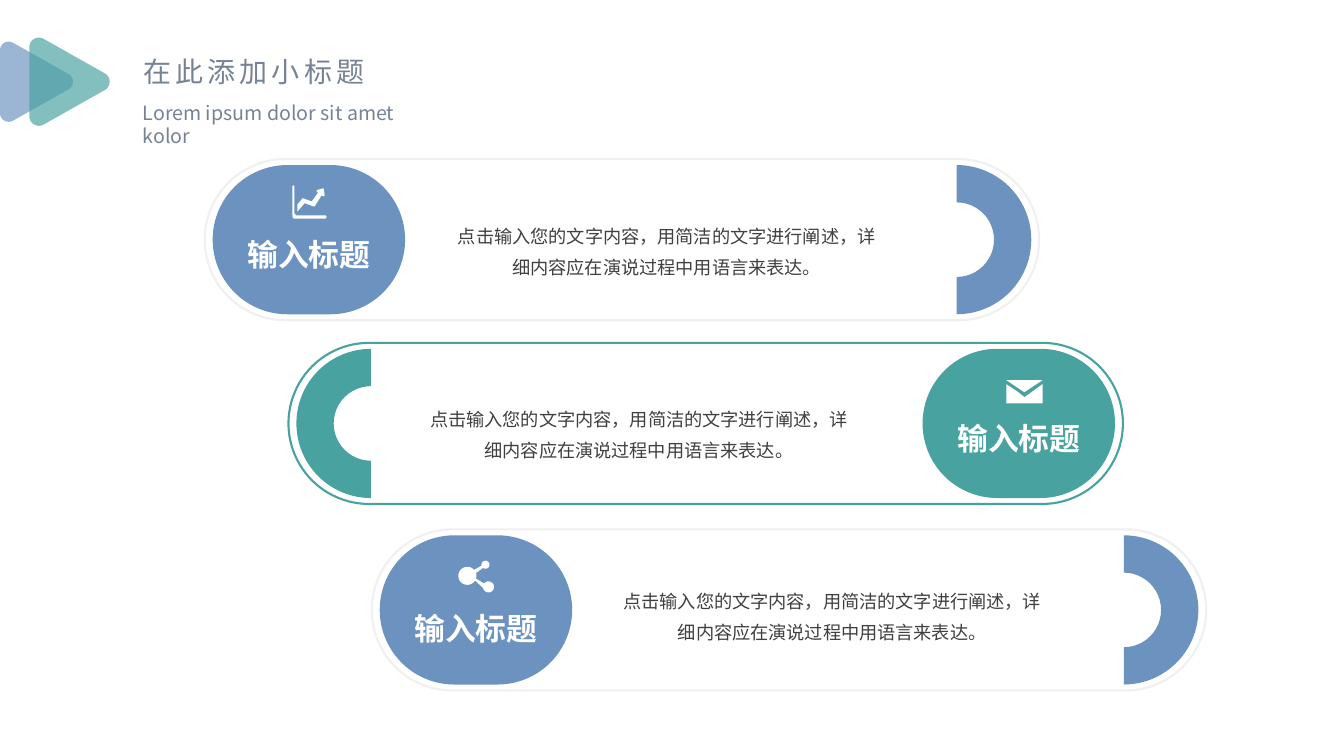
from dataclasses import dataclass
from math import cos, radians, sin

from lxml import etree
from pptx import Presentation
from pptx.dml.color import RGBColor
from pptx.enum.shapes import MSO_SHAPE
from pptx.enum.text import MSO_ANCHOR, MSO_AUTO_SIZE, PP_ALIGN
from pptx.oxml.ns import qn
from pptx.util import Cm, Pt

PILL, ARC = MSO_SHAPE.ROUNDED_RECTANGLE, MSO_SHAPE.BLOCK_ARC
LEFT, CENTER = PP_ALIGN.LEFT, PP_ALIGN.CENTER
TOP, GROW = MSO_ANCHOR.TOP, MSO_AUTO_SIZE.SHAPE_TO_FIT_TEXT


@dataclass(frozen=True)
class Theme:
    font: str = "Noto Sans CJK SC"
    blue: str = "6C92C0"
    teal: str = "48A2A0"
    pale: str = "F0F0F0"
    heading: str = "768394"
    body: str = "404040"
    white: str = "FFFFFF"
    title_size: int = 20
    subtitle_size: int = 14
    label_size: int = 22
    body_size: int = 13
    body_leading: int = 22
    frame_line: float = 1.5
    marker_opacity: int = 68


T = Theme()


def arc(cx, cy, r, start, end, steps=16):
    """Points along a circle, angles in degrees, clockwise on the slide."""
    angles = [radians(start + (end - start) * i / steps) for i in range(steps + 1)]
    return [(cx + r * cos(a), cy + r * sin(a)) for a in angles]


# Content
TITLE = "在此添加小标题"
SUBTITLE = "Lorem ipsum dolor sit amet kolor"
LABEL = "输入标题"
BODY = "点击输入您的文字内容，用简洁的文字进行阐述，详细内容应在演说过程中用语言来表达。"

# Icon outlines, in hundredths of an inch
CHART_ICON = [
    [(30, 3), (31, 3), (32, 10), (31, 11), (29, 10), (22, 21), (21, 21),
     (13, 18), (12, 18), (5, 26), (5, 19), (10, 13), (11, 13), (19, 16),
     (20, 15), (25, 8), (25, 7), (24, 6), (24, 5)],
    [(0, 1), (1, 0), (2, 1), (2, 28), (4, 30), (33, 30), (34, 31),
     (33, 33), (1, 33), (0, 31)],
]
MAIL_ICON = [
    [(0, 4), (12, 12), (18, 17), (36, 4), (36, 23), (0, 23)],
    [(0, 0), (36, 0), (18, 12)],
]
SHARE_ICON = [
    arc(9, 15, 9, 32, 319) + arc(27, 4, 4, 166, 487)
    + arc(9, 15, 9, -18, 18) + arc(30, 26, 5.5, 217, 530),
]
ICON_UNIT = 0.0254

# Offsets (cm): icon from capsule left and frame top, others from the frame
ROWS = [
    dict(left=5.16, top=4.01, color=T.blue, line=T.pale, capsule_right=False,
         icon=CHART_ICON, icon_at=(2.01, 0.66), label_dy=1.93, body_at=(6.24, 1.45)),
    dict(left=7.27, top=8.64, color=T.teal, line=T.teal, capsule_right=True,
         icon=MAIL_ICON, icon_at=(2.11, 0.94), label_dy=1.93, body_at=(3.43, 1.42)),
    dict(left=9.37, top=13.34, color=T.blue, line=T.pale, capsule_right=False,
         icon=SHARE_ICON, icon_at=(1.98, 0.79), label_dy=2.03, body_at=(6.2, 1.32)),
]
FRAME_W, FRAME_H = 21.03, 4.06
CAPSULE_W, CAPSULE_H = 4.85, 3.76
SIDE_GAP = 0.2
LABEL_W, LABEL_H = 3.4, 0.94
BODY_W, BODY_H = 10.8, 1.47

# Rounded triangles: left edge, scale, colour
MARKERS = [(0, 1, T.blue), (0.74, 1.1, T.teal)]
MARKER_Y = 2.06
TRIANGLE = (arc(0.22, -0.79, 0.22, 180, 300) + arc(1.62, 0, 0.22, -60, 60)
            + arc(0.22, 0.79, 0.22, 60, 180))


def paint(s, fill=None, line=None):
    s.shadow.inherit = False
    if fill:
        s.fill.solid()
        s.fill.fore_color.rgb = RGBColor.from_string(fill)
    else:
        s.fill.background()
    if line:
        s.line.color.rgb = RGBColor.from_string(line)
        s.line.width = Pt(T.frame_line)
    else:
        s.line.fill.background()


def add_preset(slide, kind, box, **colors):
    s = slide.shapes.add_shape(kind, *map(Cm, box))
    if kind == PILL:
        s.adjustments[0] = 0.5
    paint(s, **colors)
    return s


def add_outline(slide, contours, unit, left, top, color):
    """Fill closed contours whose points are in units of `unit` cm."""
    scaled = [[(Cm(x * unit), Cm(y * unit)) for x, y in c] for c in contours]
    builder = slide.shapes.build_freeform(*scaled[0][0], scale=1.0)
    for i, points in enumerate(scaled):
        if i:
            builder.move_to(*points[0])
        builder.add_line_segments(points[1:], close=True)
    s = builder.convert_to_shape(Cm(left), Cm(top))
    paint(s, fill=color)
    return s


def set_opacity(s, percent):
    color = s.fill._xPr.find(".//" + qn("a:srgbClr"))
    etree.SubElement(color, qn("a:alpha")).set("val", str(percent * 1000))


def write(s, text, size, color, align=LEFT, bold=False, wrap=True,
          inset=None, leading=None, tracking=None):
    tf = s.text_frame
    frame = dict(word_wrap=wrap, auto_size=GROW, vertical_anchor=TOP)
    if inset is not None:
        for side in ("left", "top", "right", "bottom"):
            frame["margin_" + side] = Cm(inset)
    for name, value in frame.items():
        setattr(tf, name, value)
    p = tf.paragraphs[0]
    p.alignment = align
    if leading:
        p.line_spacing = Pt(leading)
    r = p.add_run()
    r.text = text
    for name, value in dict(name=T.font, size=Pt(size), bold=bold).items():
        setattr(r.font, name, value)
    r.font.color.rgb = RGBColor.from_string(color)
    props = r._r.get_or_add_rPr()
    etree.SubElement(props, qn("a:ea")).set("typeface", T.font)
    if tracking:
        props.set("spc", str(tracking * 100))


def add_text(slide, box, *args, **fmt):
    write(slide.shapes.add_textbox(*map(Cm, box)), *args, **fmt)


def add_header(slide):
    title = slide.shapes.title
    for name, value in dict(left=3.35, top=1.24, width=6.25, height=1.12).items():
        setattr(title, name, Cm(value))
    write(title, TITLE, T.title_size, T.heading, wrap=False, tracking=3)
    add_text(slide, (3.35, 2.41, 8.1, 0.86), SUBTITLE, T.subtitle_size, T.heading)
    for left, scale, color in MARKERS:
        s = add_outline(slide, [TRIANGLE], scale, left, MARKER_Y, color)
        set_opacity(s, T.marker_opacity)


def add_row(slide, row):
    left, top, color = row["left"], row["top"], row["color"]
    near = left + SIDE_GAP
    far = left + FRAME_W - SIDE_GAP
    if row["capsule_right"]:
        capsule_x, arc_x, turn = far - CAPSULE_W, near, 270
    else:
        capsule_x, arc_x, turn = near, far - CAPSULE_H, 90
    inner_top = top + (FRAME_H - CAPSULE_H) / 2

    add_preset(slide, PILL, (left, top, FRAME_W, FRAME_H), line=row["line"])
    add_preset(slide, PILL, (capsule_x, inner_top, CAPSULE_W, CAPSULE_H), fill=color)
    ring = add_preset(slide, ARC, (arc_x, inner_top, CAPSULE_H, CAPSULE_H), fill=color)
    ring.rotation = turn

    dx, dy = row["icon_at"]
    add_outline(slide, row["icon"], ICON_UNIT, capsule_x + dx, top + dy, T.white)
    label_x = capsule_x + (CAPSULE_W - LABEL_W) / 2
    add_text(slide, (label_x, top + row["label_dy"], LABEL_W, LABEL_H), LABEL,
             T.label_size, T.white, align=CENTER, bold=True, inset=0)
    dx, dy = row["body_at"]
    add_text(slide, (left + dx, top + dy, BODY_W, BODY_H), BODY, T.body_size,
             T.body, align=CENTER, inset=0, leading=T.body_leading)


def main():
    prs = Presentation()
    prs.slide_width, prs.slide_height = Cm(33.87), Cm(19.05)
    slide = prs.slides.add_slide(prs.slide_layouts[5])
    add_header(slide)
    for row in ROWS:
        add_row(slide, row)
    prs.save("out.pptx")


if __name__ == "__main__":
    main()
